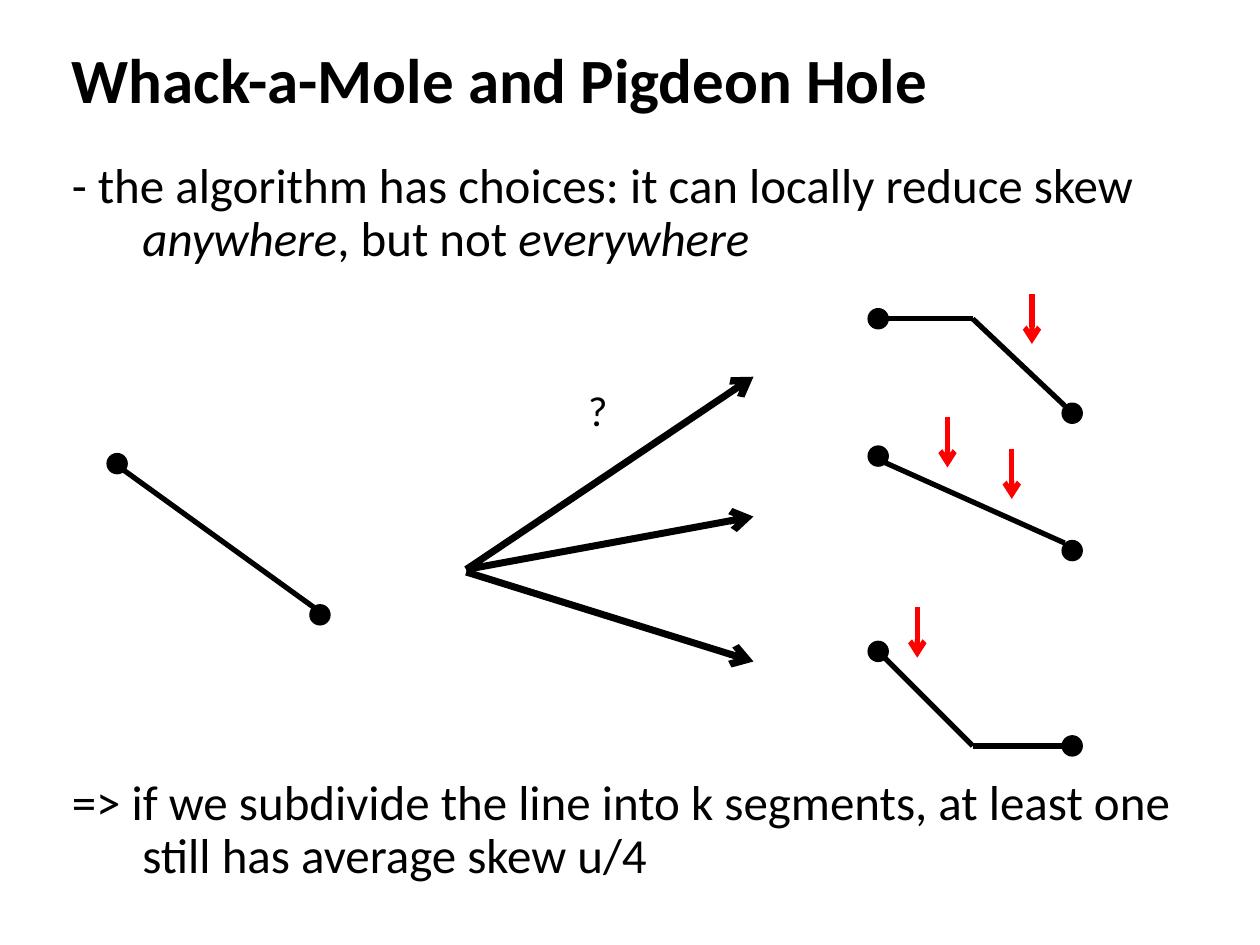
from pptx import Presentation
from pptx.dml.color import RGBColor
from pptx.enum.shapes import MSO_CONNECTOR, MSO_SHAPE
from pptx.enum.text import MSO_ANCHOR, MSO_AUTO_SIZE, PP_ALIGN
from pptx.oxml.ns import qn
from pptx.util import Inches, Pt
from lxml import etree

BLACK = RGBColor(0, 0, 0)
RED = RGBColor(255, 0, 0)
STRAIGHT = MSO_CONNECTOR.STRAIGHT
OVAL = MSO_SHAPE.OVAL
TOP, MIDDLE = MSO_ANCHOR.TOP, MSO_ANCHOR.MIDDLE
FIXED = MSO_AUTO_SIZE.NONE
LEFT, CENTER = PP_ALIGN.LEFT, PP_ALIGN.CENTER
FONT = "Calibri"
DOT = 0.16


def place(shape, left, top, width, height):
    shape.left, shape.top = Inches(left), Inches(top)
    shape.width, shape.height = Inches(width), Inches(height)


def add_run(para, text, size, bold=False, italic=False):
    run = para.add_run()
    run.text = text
    font = run.font
    font.name, font.size = FONT, Pt(size)
    font.bold, font.italic = bold, italic
    font.color.rgb = BLACK


def set_frame(frame, anchor):
    frame.word_wrap = True
    frame.auto_size = FIXED
    frame.vertical_anchor = anchor


def add_title(slide, text):
    title = slide.shapes.title
    place(title, 0.47, 0.25, 9.19, 0.75)
    set_frame(title.text_frame, MIDDLE)
    para = title.text_frame.paragraphs[0]
    para.alignment = LEFT
    add_run(para, text, 36, bold=True)


def add_body(slide, items):
    body = slide.placeholders[1]
    place(body, 0.47, 1.23, 8.94, 6.1)
    frame = body.text_frame
    set_frame(frame, TOP)
    for num, (gap, runs) in enumerate(items):
        para = frame.add_paragraph() if num else frame.paragraphs[0]
        para.line_spacing = 0.9
        para.space_before = Pt(gap)
        props = para._p.get_or_add_pPr()
        props.set("marL", str(Inches(0.56)))
        props.set("indent", str(Inches(-0.56)))
        etree.SubElement(props, qn("a:buNone"))
        for text, italic in runs:
            add_run(para, text, 28, italic=italic)


def add_label(slide, text):
    box = slide.shapes.add_textbox(
        Inches(4.45), Inches(3.05), Inches(0.59), Inches(0.46))
    set_frame(box.text_frame, TOP)
    para = box.text_frame.paragraphs[0]
    para.alignment = CENTER
    para.line_spacing = 0.9
    add_run(para, text, 24)


def add_line(slide, start, end, color=BLACK, width=3, arrow=False):
    line = slide.shapes.add_connector(
        STRAIGHT, *(Inches(n) for n in (*start, *end)))
    line.line.color.rgb = color
    line.line.width = Pt(width)
    props = line._element.spPr
    if arrow:
        etree.SubElement(props.find(qn("a:ln")), qn("a:tailEnd"), type="arrow")
    etree.SubElement(props, qn("a:effectLst"))


def add_dot(slide, x, y):
    dot = slide.shapes.add_shape(
        OVAL, Inches(x - DOT / 2), Inches(y - DOT / 2), Inches(DOT), Inches(DOT))
    dot.shadow.inherit = False
    dot.fill.solid()
    dot.fill.fore_color.rgb = BLACK
    dot.line.color.rgb = BLACK
    dot.line.width = Pt(0.75)


def add_curve(slide, dots, points):
    for start, end in zip(points, points[1:]):
        add_line(slide, start, end)
    for x, y in dots:
        add_dot(slide, x, y)


def main():
    deck = Presentation()
    deck.slide_width, deck.slide_height = Inches(10), Inches(7.5)
    slide = deck.slides.add_slide(deck.slide_layouts[1])
    add_title(slide, "Whack-a-Mole and Pigdeon Hole")
    add_body(slide, [
        (0, [("- the algorithm has choices: it can locally reduce skew ", False),
             ("anywhere", True), (", but not ", False), ("everywhere", True)]),
        (292, [("=> if we subdivide the line into k segments, "
                "at least one still has average skew u/4", False)]),
    ])

    add_curve(slide, [(0.93, 3.68), (2.54, 4.88)], [(0.98, 3.73), (2.49, 4.82)])
    options = [
        (2.53, [(7.05, 2.53), (7.72, 2.53), (8.45, 3.22)]),
        (3.62, [(7.02, 3.67), (8.45, 4.31)]),
        (5.17, [(7.02, 5.22), (7.72, 5.92), (8.43, 5.92)]),
    ]
    for y, points in options:
        add_curve(slide, [(6.97, y), (8.51, y + 0.75)], points)

    for start, end in [(4.52, 2.99), (4.52, 4.1), (4.54, 5.25)]:
        add_line(slide, (3.7, start), (5.98, end), width=4, arrow=True)
    add_label(slide, "?")
    for x, y in [(8.19, 2.33), (7.52, 3.31), (8.03, 3.56), (7.28, 4.82)]:
        add_line(slide, (x, y), (x, y + 0.4), RED, arrow=True)
    deck.save("out.pptx")


if __name__ == "__main__":
    main()
